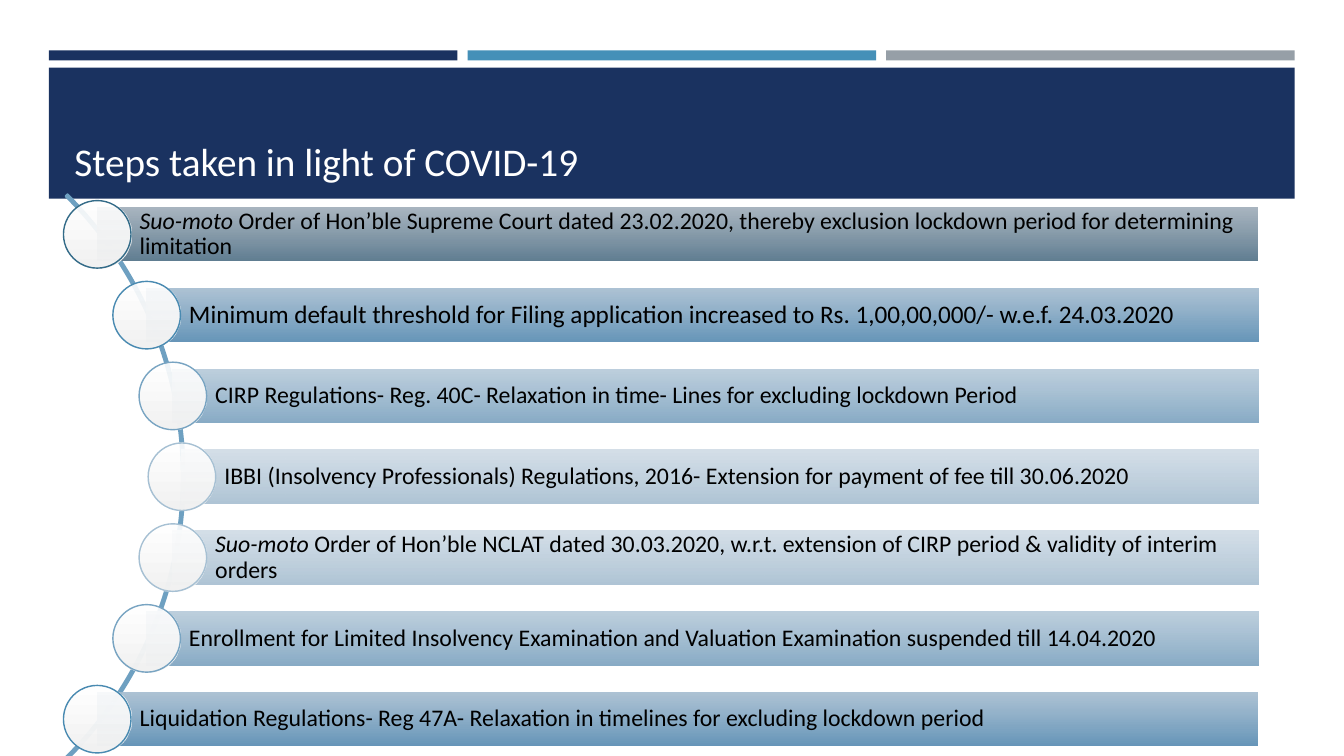
from collections import namedtuple

from lxml import etree
from pptx import Presentation
from pptx.dml.color import RGBColor
from pptx.enum.shapes import MSO_SHAPE
from pptx.enum.text import MSO_ANCHOR, PP_ALIGN
from pptx.oxml.ns import qn
from pptx.util import Inches, Pt

RECTANGLE, OVAL, ARC = MSO_SHAPE.RECTANGLE, MSO_SHAPE.OVAL, MSO_SHAPE.BLOCK_ARC
MIDDLE, BOTTOM, LEFT = MSO_ANCHOR.MIDDLE, MSO_ANCHOR.BOTTOM, PP_ALIGN.LEFT

COLUMNS, ROWS = 133.33, 75
CELL = Inches(0.1)
FONT = "Calibri"
COLORS = {
    "navy": "1A3260", "blue": "4590B8", "grey": "969FA7",
    "arc": "6EA0C1", "white": "FFFFFF", "pearl": "F2F2F2", "black": "000000",
}
TONES = {
    "slate": ("9FADB9", "617E92", "336B88"),
    "strong": ("A4BCD0", "6796B9", "498AB1"),
    "medium": ("B6CADA", "89ACC6", "78A4C2"),
    "pale": ("D0DCE6", "B0C5D6", "A6C0D3"),
}
TITLE = "Steps taken in light of COVID-19"
STEPS = [
    ("slate", 17, "Suo-moto ", "Order of Hon’ble Supreme Court dated 23.02.2020, "
     "thereby exclusion lockdown period for determining limitation"),
    ("strong", 18, "", "Minimum default threshold for Filing application increased to "
     "Rs. 1,00,00,000/- w.e.f. 24.03.2020"),
    ("medium", 17, "", "CIRP Regulations- Reg. 40C- Relaxation in time- Lines for "
     "excluding lockdown Period"),
    ("pale", 17, "", "IBBI (Insolvency Professionals) Regulations, 2016- Extension for "
     "payment of fee till 30.06.2020"),
    ("pale", 17, "Suo-moto ", "Order of Hon’ble NCLAT dated 30.03.2020, w.r.t. extension "
     "of CIRP period & validity of interim orders"),
    ("medium", 17, "", "Enrollment for Limited Insolvency Examination and Valuation "
     "Examination suspended till 14.04.2020"),
    ("strong", 17, "", "Liquidation Regulations- Reg 47A- Relaxation in timelines for "
     "excluding lockdown period"),
]
INDENTS = [0, 4.9, 7.5, 8.4]

Box = namedtuple("Box", "left top width height")


def rgb(value):
    return RGBColor.from_string(value)


def place(box):
    return [round(length * CELL) for length in box]


def add_shape(slide, kind, box, fill=None, line=None, weight=1):
    shape = slide.shapes.add_shape(kind, *place(box))
    shape.shadow.inherit = False
    if fill is None:
        shape.fill.background()
    elif isinstance(fill, str):
        shape.fill.solid()
        shape.fill.fore_color.rgb = rgb(fill)
    else:
        shape.fill.gradient()
        shape.fill.gradient_angle = 270
        stops = shape.fill.gradient_stops
        for stop, position, value in zip(stops, (0, 1), fill):
            stop.position = position
            stop.color.rgb = rgb(value)
        first_color = next(shape.element.iter(qn("a:srgbClr")))
        etree.SubElement(first_color, qn("a:alpha"), val="90000")
    if line:
        shape.line.color.rgb = rgb(line)
        shape.line.width = Pt(weight)
    else:
        shape.line.fill.background()
    return shape


def write_text(shape, text, lead="", size=17, color="black", anchor=MIDDLE,
               inset=1, spacing=0.9):
    frame = shape.text_frame
    frame.word_wrap = True
    frame.vertical_anchor = anchor
    frame.margin_left = round(inset * CELL)
    frame.margin_right = frame.margin_top = frame.margin_bottom = round(0.5 * CELL)
    para = frame.paragraphs[0]
    para.alignment = LEFT
    para.line_spacing = spacing
    for words, italic in ((lead, True), (text, False)):
        if words:
            span = para.add_run()
            span.text = words
            span.font.name = FONT
            span.font.size = Pt(size)
            span.font.italic = italic
            span.font.color.rgb = rgb(COLORS[color])


def add_header(slide, box):
    gap = 1
    width = (box.width - 2 * gap) / 3
    for index, name in enumerate(("navy", "blue", "grey")):
        left = box.left + index * (width + gap)
        add_shape(slide, RECTANGLE, Box(left, box.top, width, 1), COLORS[name])
    banner = Box(box.left, box.top + 1.7, box.width, box.height - 1.7)
    add_shape(slide, RECTANGLE, banner, COLORS["navy"])
    title_box = Box(banner.left + 1.55, banner.top + 1, banner.width - 3, 11.1)
    title = slide.shapes.add_textbox(*place(title_box))
    write_text(title, TITLE, size=28, color="white", anchor=BOTTOM)


def add_timeline(slide, box):
    diameter, bar_height, arc_size = 6.7, 5.3, 79.2
    pitch = (box.height - diameter) / (len(STEPS) - 1)
    middle = box.top + box.height / 2
    arc_box = Box(box.left - 67.2, middle - arc_size / 2, arc_size, arc_size)
    arc = add_shape(slide, ARC, arc_box, line=COLORS["arc"], weight=1.75)
    for index, value in enumerate((189, 27, 0.003)):
        arc.adjustments[index] = value
    for index, (tone, size, lead, text) in enumerate(STEPS):
        start, end, outline = TONES[tone]
        indent = INDENTS[min(index, len(STEPS) - 1 - index)]
        left = box.left + indent
        top = box.top + index * pitch
        bar_left = left + diameter / 2
        bar_top = top + (diameter - bar_height) / 2
        bar_box = Box(bar_left, bar_top, box.left + box.width - bar_left, bar_height)
        bar = add_shape(slide, RECTANGLE, bar_box, (start, end))
        write_text(bar, text, lead=lead, size=size, inset=4.2)
        add_shape(slide, OVAL, Box(left, top, diameter, diameter),
                  (COLORS["white"], COLORS["pearl"]), outline)


def main():
    deck = Presentation()
    deck.slide_width = round(COLUMNS * CELL)
    deck.slide_height = ROWS * CELL
    slide = deck.slides.add_slide(deck.slide_layouts[6])
    add_header(slide, Box(4.85, 5, 123.6, 14.7))
    add_timeline(slide, Box(6.3, 19.9, 118.5, 54.8))
    deck.save("out.pptx")


if __name__ == "__main__":
    main()
